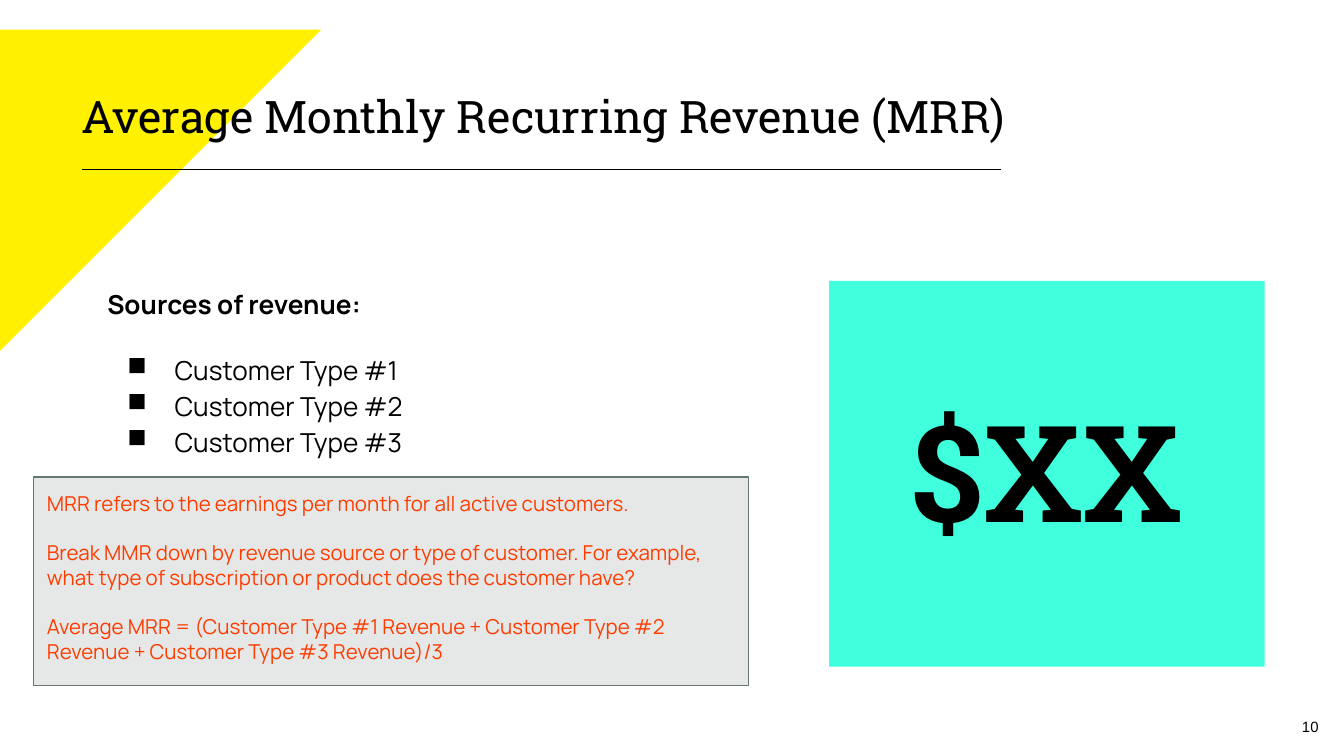
from dataclasses import dataclass
from typing import Optional

from lxml.etree import SubElement
from pptx import Presentation
from pptx.dml.color import RGBColor
from pptx.enum.shapes import MSO_CONNECTOR, MSO_SHAPE
from pptx.enum.text import MSO_ANCHOR, PP_ALIGN
from pptx.oxml.ns import qn
from pptx.util import Inches, Pt

# The slide is a grid of 100 columns by 56.25 rows, each 0.1 inch
CELL = 0.1
COLUMNS, ROWS = 100, 56.25


@dataclass(frozen=True)
class Theme:
    black: str = "000000"
    yellow: str = "FFF100"
    mint: str = "40FFDC"
    slate: str = "657573"
    orange: str = "FF3C00"
    heading_font: str = "Roboto Slab"
    body_font: str = "Manrope"
    number_font: str = "Arial"
    title_size: float = 24
    body_size: float = 14
    note_size: float = 11
    figure_size: float = 72
    number_size: float = 8
    line_width: float = 0.75
    note_opacity: int = 16


@dataclass(frozen=True)
class Area:
    column: float
    row: float
    width: float
    height: float

    def lengths(self) -> tuple:
        return tuple(map(grid, (self.column, self.row, self.width, self.height)))


@dataclass(frozen=True)
class TextStyle:
    font: str
    size: float
    color: str = Theme.black
    bold: bool = False
    align: PP_ALIGN = PP_ALIGN.LEFT
    line_spacing: Optional[float] = None


@dataclass(frozen=True)
class Line:
    text: str
    style: TextStyle
    space_before: float = 0
    bullet: str = ""


def grid(cells: float) -> int:
    return Inches(cells * CELL)


def rgb(color: str) -> RGBColor:
    return RGBColor.from_string(color)


def add_bullet(paragraph, character: str) -> None:
    properties = paragraph._p.get_or_add_pPr()
    properties.set("marL", str(Inches(0.5)))
    properties.set("indent", str(Inches(-0.35)))
    bullet_color = SubElement(properties, qn("a:buClr"))
    SubElement(bullet_color, qn("a:srgbClr"), val=Theme.black)
    SubElement(properties, qn("a:buChar"), char=character)


def write(shape, lines: list[Line], anchor: MSO_ANCHOR = MSO_ANCHOR.TOP) -> None:
    frame = shape.text_frame
    frame.word_wrap = True
    frame.vertical_anchor = anchor
    frame.margin_left = frame.margin_right = grid(1)
    frame.margin_top = frame.margin_bottom = grid(1)
    for index, line in enumerate(lines):
        paragraph = frame.add_paragraph() if index else frame.paragraphs[0]
        paragraph.text = line.text
        if line.bullet:
            add_bullet(paragraph, line.bullet)
        style = line.style
        paragraph.alignment = style.align
        if style.line_spacing:
            paragraph.line_spacing = style.line_spacing
        if index:
            paragraph.space_before = Pt(line.space_before)
        for run in paragraph.runs:
            run.font.name = style.font
            run.font.size = Pt(style.size)
            run.font.bold = style.bold
            run.font.color.rgb = rgb(style.color)


def add_text(slide, area: Area, lines: list[Line],
             anchor: MSO_ANCHOR = MSO_ANCHOR.TOP) -> None:
    write(slide.shapes.add_textbox(*area.lengths()), lines, anchor)


def add_panel(slide, kind: MSO_SHAPE, area: Area, color: str):
    shape = slide.shapes.add_shape(kind, *area.lengths())
    shape.shadow.inherit = False
    shape.fill.solid()
    shape.fill.fore_color.rgb = rgb(color)
    shape.line.fill.background()
    return shape


def add_rule(slide, start: float, end: float, row: float) -> None:
    rule = slide.shapes.add_connector(
        MSO_CONNECTOR.STRAIGHT, grid(start), grid(row), grid(end), grid(row))
    rule.line.color.rgb = rgb(Theme.black)
    rule.line.width = Pt(Theme.line_width)
    SubElement(rule._element.spPr, qn("a:effectLst"))


def build_slide(slide) -> None:
    title = TextStyle(Theme.heading_font, Theme.title_size)
    number = TextStyle(Theme.number_font, Theme.number_size, align=PP_ALIGN.RIGHT)
    lead = TextStyle(Theme.body_font, Theme.body_size, bold=True, line_spacing=1.15)
    item = TextStyle(Theme.body_font, Theme.body_size, line_spacing=1.15)
    figure = TextStyle(Theme.heading_font, Theme.figure_size, bold=True,
                       align=PP_ALIGN.CENTER)
    note = TextStyle(Theme.body_font, Theme.note_size, Theme.orange)

    # Corner triangle
    corner = add_panel(slide, MSO_SHAPE.RIGHT_TRIANGLE,
                       Area(0, 2.2, 23.9, 23.9), Theme.yellow)
    corner.rotation = 90

    # Title, rule and slide number
    add_text(slide, Area(5.1, 5.6, 93.2, 8.4),
             [Line("Average Monthly Recurring Revenue (MRR)", title)])
    add_rule(slide, 6.1, 74.5, 12.6)
    add_text(slide, Area(93.1, 51.9, 6, 4.3), [Line("10", number)], MSO_ANCHOR.MIDDLE)

    # Revenue sources
    sources = [Line(f"Customer Type #{index}", item, 16 if index == 1 else 0, "■")
               for index in range(1, 4)]
    add_text(slide, Area(7, 20.1, 30.1, 27.6),
             [Line("Sources of revenue:", lead), *sources])

    # Key figure
    add_panel(slide, MSO_SHAPE.RECTANGLE, Area(61.7, 20.9, 32.4, 28.7), Theme.mint)
    add_text(slide, Area(61.7, 27.9, 32.4, 16.8), [Line("$XX", figure)])

    # Translucent explanation box
    explanation = add_panel(slide, MSO_SHAPE.RECTANGLE,
                            Area(2.5, 35.5, 53.2, 15.5), Theme.slate)
    fill_color = explanation._element.spPr.find(qn("a:solidFill"))[0]
    SubElement(fill_color, qn("a:alpha"), val=str(Theme.note_opacity * 1000))
    explanation.line.color.rgb = rgb(Theme.slate)
    explanation.line.width = Pt(Theme.line_width)
    notes = (
        "MRR refers to the earnings per month for all active customers.",
        "Break MMR down by revenue source or type of customer. For example, "
        "what type of subscription or product does the customer have?",
        "Average MRR = (Customer Type #1 Revenue + Customer Type #2 Revenue "
        "+ Customer Type #3 Revenue)/3",
    )
    write(explanation, [Line(text, note, space_before=13.2) for text in notes])


def main() -> None:
    presentation = Presentation()
    presentation.slide_width = grid(COLUMNS)
    presentation.slide_height = grid(ROWS)
    build_slide(presentation.slides.add_slide(presentation.slide_layouts[6]))
    presentation.save("out.pptx")


if __name__ == "__main__":
    main()
